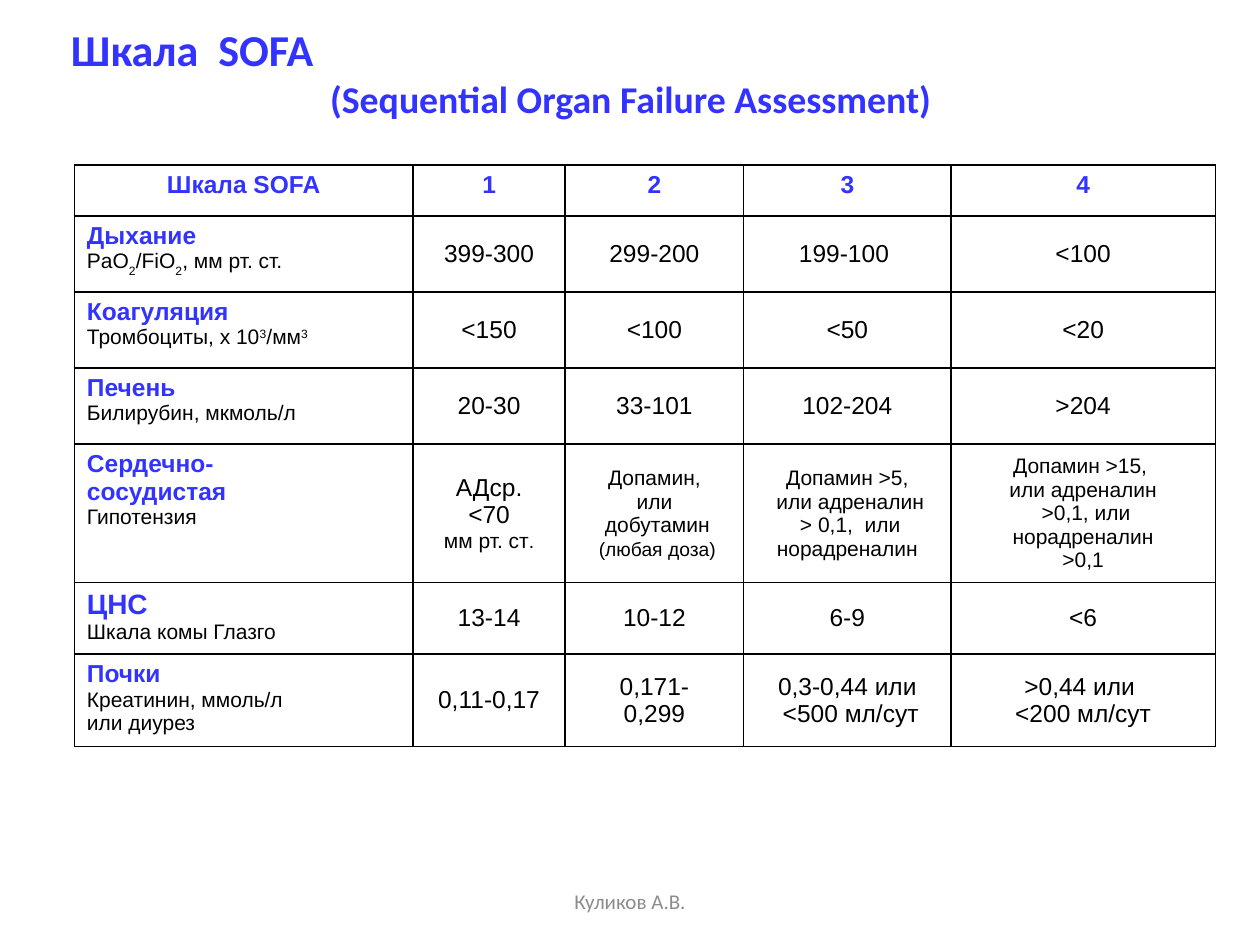
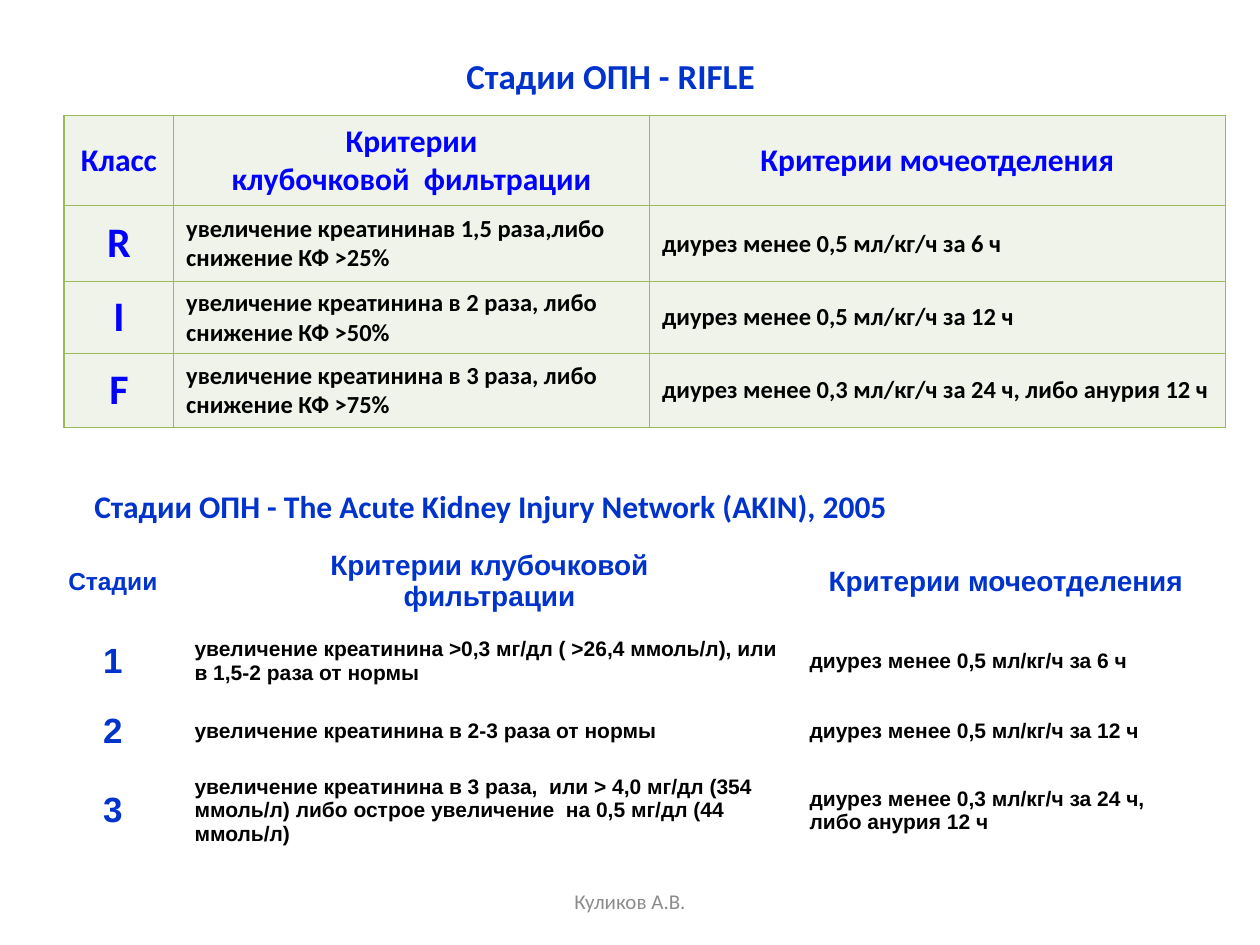
from lxml.etree import SubElement
from pptx import Presentation
from pptx.dml.color import RGBColor
from pptx.enum.text import MSO_ANCHOR as Anchor, PP_ALIGN as Align
from pptx.oxml.ns import qn
from pptx.util import Pt

VIOLET = "3333FF"
NAVY = "0033CC"
BLUE = "0000FF"
BLACK = "000000"
GREY = "8C8C8C"
GREEN = "9BBB59"
PALE_GREEN = "EFF3EA"
SUBSCRIPT = {"baseline": -30000}
SUPERSCRIPT = {"baseline": 30000}


def colour(value):
    return RGBColor.from_string(value)


def add_run(paragraph, text, font="Arial", size=14, color=BLACK, bold=False, baseline=None):
    run = paragraph.add_run()
    run.text = text
    run.font.name = font
    run.font.size = Pt(size)
    run.font.bold = bold
    run.font.color.rgb = colour(color)
    if baseline:
        run._r.get_or_add_rPr().set("baseline", str(baseline))


def write_text(frame, content, align=Align.CENTER, anchor=Anchor.MIDDLE, **style):
    """Content is a string, or a list of lines made of strings and (text, style) pairs."""
    frame.word_wrap = True
    frame.vertical_anchor = anchor
    lines = [[line] for line in content.split("\n")] if isinstance(content, str) else content
    for index, pieces in enumerate(lines):
        paragraph = frame.add_paragraph() if index else frame.paragraphs[0]
        paragraph.alignment = align
        for piece in pieces:
            text, changes = (piece, {}) if isinstance(piece, str) else piece
            add_run(paragraph, text, **{**style, **changes})


def add_text(slide, content, left, top, width, height, **style):
    box = slide.shapes.add_textbox(Pt(left), Pt(top), Pt(width), Pt(height))
    write_text(box.text_frame, content, **{"font": "Calibri", **style})
    return box.text_frame


def add_footer(slide):
    add_text(slide, "Куликов А.В.", 246, 500.5, 228, 29, size=12, color=GREY)


def set_borders(cell, color):
    properties = cell._tc.get_or_add_tcPr()
    for side in ("lnL", "lnR", "lnT", "lnB"):
        line = SubElement(properties, qn(f"a:{side}"), w=str(Pt(1)))
        SubElement(SubElement(line, qn("a:solidFill")), qn("a:srgbClr"), val=color)


def write_cell(cell, content, **style):
    anchor = style.pop("anchor", Anchor.MIDDLE)
    write_text(cell.text_frame, content, **style)
    cell.vertical_anchor = anchor


def add_grid(slide, left, top, widths, heights, border=None, fill=None):
    frame = slide.shapes.add_table(len(heights), len(widths), Pt(left), Pt(top),
                                   Pt(sum(widths)), Pt(sum(heights)))
    table = frame.table
    table.first_row = table.horz_banding = False
    for column, width in zip(table.columns, widths):
        column.width = Pt(width)
    for row, height in zip(table.rows, heights):
        row.height = Pt(height)
    for cell in table.iter_cells():
        if border:
            set_borders(cell, border)
        if fill:
            cell.fill.solid()
            cell.fill.fore_color.rgb = colour(fill)
        else:
            cell.fill.background()
    return table


def organ(name, *details, size=14):
    heading = {"size": size, "color": VIOLET, "bold": True}
    return [[(line, heading)] for line in name.split("\n")] + list(details)


def small(text):
    return [[(line, {"size": 12})] for line in text.split("\n")]


SOFA_ROWS = [
    (organ("Дыхание", ["PaO", ("2", SUBSCRIPT), "/FiO", ("2", SUBSCRIPT), ", мм рт. ст."]),
     "399-300", "299-200", "199-100 ", "<100"),
    (organ("Коагуляция", ["Тромбоциты, х 10", ("3", SUPERSCRIPT), "/мм", ("3", SUPERSCRIPT)]),
     "<150", "<100", "<50", "<20"),
    (organ("Печень", ["Билирубин, мкмоль/л"]),
     "20-30", "33-101", "102-204", ">204"),
    (organ("Сердечно-\nсосудистая", ["Гипотензия"]),
     [["АДср."], ["<70"], [("мм рт. ст", {"size": 12}), (".", {"size": 11})]],
     small("Допамин,\nили\n добутамин") + [[(" ", {"size": 12}), ("(любая доза)", {"size": 11})]],
     small("Допамин >5,\n или адреналин\n > 0,1,  или\n норадреналин "),
     small("Допамин >15, \nили адреналин\n >0,1, или\n норадреналин \n>0,1")),
    (organ("ЦНС", ["Шкала комы Глазго"], size=16),
     "13-14", "10-12", "6-9", "<6"),
    (organ("Почки", ["Креатинин, ммоль/л"], ["или диурез"]),
     "0,11-0,17", "0,171-\n0,299", "0,3-0,44 или\n <500 мл/сут", ">0,44 или \n<200 мл/сут"),
]

RIFLE_ROWS = [
    ("R", "увеличение креатининав 1,5 раза,либо снижение КФ >25%",
     "диурез менее 0,5 мл/кг/ч за 6 ч"),
    ("I", "увеличение креатинина в 2 раза, либо снижение КФ >50%",
     "диурез менее 0,5 мл/кг/ч за 12 ч"),
    ("F", "увеличение креатинина в 3 раза, либо снижение КФ >75%",
     "диурез менее 0,3 мл/кг/ч за 24 ч, либо анурия 12 ч"),
]

AKIN_ROWS = [
    ("1", "увеличение креатинина >0,3 мг/дл ( >26,4 ммоль/л), или в 1,5-2 раза от нормы",
     "диурез менее 0,5 мл/кг/ч за 6 ч"),
    ("2", "увеличение креатинина в 2-3 раза от нормы",
     "диурез менее 0,5 мл/кг/ч за 12 ч"),
    ("3", "увеличение креатинина в 3 раза,  или > 4,0 мг/дл (354\n"
     "ммоль/л) либо острое увеличение  на 0,5 мг/дл (44  ммоль/л)",
     "диурез менее 0,3 мл/кг/ч за 24 ч, либо анурия 12 ч"),
]


def fill_sofa_table(table):
    for column, title in enumerate(("Шкала SOFA", "1", "2", "3", "4")):
        write_cell(table.cell(0, column), title, anchor=Anchor.TOP, color=VIOLET, bold=True)
    for row, (organ_lines, *scores) in enumerate(SOFA_ROWS, 1):
        write_cell(table.cell(row, 0), organ_lines, align=Align.LEFT, anchor=Anchor.TOP, size=12)
        for column, score in enumerate(scores, 1):
            write_cell(table.cell(row, column), score)


def fill_stage_table(table, headers, rows, font, color, header_sizes, stage_size, body_size):
    for column, (title, size) in enumerate(zip(headers, header_sizes)):
        write_cell(table.cell(0, column), title, font=font, size=size, color=color, bold=True)
    for row, (stage, *criteria) in enumerate(rows, 1):
        write_cell(table.cell(row, 0), stage, font=font, size=stage_size, color=color, bold=True)
        for column, text in enumerate(criteria, 1):
            write_cell(table.cell(row, column), text, align=Align.LEFT,
                       font=font, size=body_size, bold=True)


def build_sofa_slide(slide):
    title = add_text(slide, [["Шкала  SOFA"],
                             [("(Sequential Organ Failure Assessment)", {"size": 21.6})]],
                     14.5, 21.5, 692, 39, size=25.2, color=VIOLET, bold=True)
    scale_name = title.paragraphs[0]
    scale_name.alignment = Align.LEFT
    scale_name._p.get_or_add_pPr().set("marL", str(Pt(19)))
    table = add_grid(slide, 42.5, 94.3, (193.5, 87, 102, 118.5, 151),
                     (29, 43.5, 43.5, 43.5, 79, 38.5, 49.5), border=BLACK)
    fill_sofa_table(table)
    add_footer(slide)


def build_kidney_slide(slide):
    add_text(slide, "Стадии ОПН - RIFLE", 25, 21, 648, 44, size=20, color=NAVY, bold=True)
    rifle = add_grid(slide, 36.7, 66, (62.5, 272, 329), (51.5, 43.5, 41, 42.5),
                     border=GREEN, fill=PALE_GREEN)
    fill_stage_table(rifle, ("Класс", "Критерии\n клубочковой  фильтрации ",
                             "Критерии мочеотделения"),
                     RIFLE_ROWS, "Calibri", BLUE, (18, 18, 18), 24, 14)
    add_footer(slide)
    akin = add_grid(slide, 25, 309.5, (79, 351.5, 238.5), (42.5, 45.5, 34.5, 56))
    fill_stage_table(akin, ("Стадии", "Критерии клубочковой\n фильтрации ",
                            "Критерии мочеотделения"),
                     AKIN_ROWS, "Arial", NAVY, (14, 16, 16), 20, 12)
    add_text(slide, "Стадии ОПН - The Acute Kidney Injury Network (AKIN), 2005",
             46.8, 260.5, 623.5, 43, align=Align.LEFT, anchor=Anchor.BOTTOM,
             size=18, color=NAVY, bold=True)


def main():
    presentation = Presentation()
    presentation.slide_width = Pt(720)
    presentation.slide_height = Pt(540)
    blank = presentation.slide_layouts[6]
    for build in (build_sofa_slide, build_kidney_slide):
        build(presentation.slides.add_slide(blank))
    presentation.save("out.pptx")


if __name__ == "__main__":
    main()
